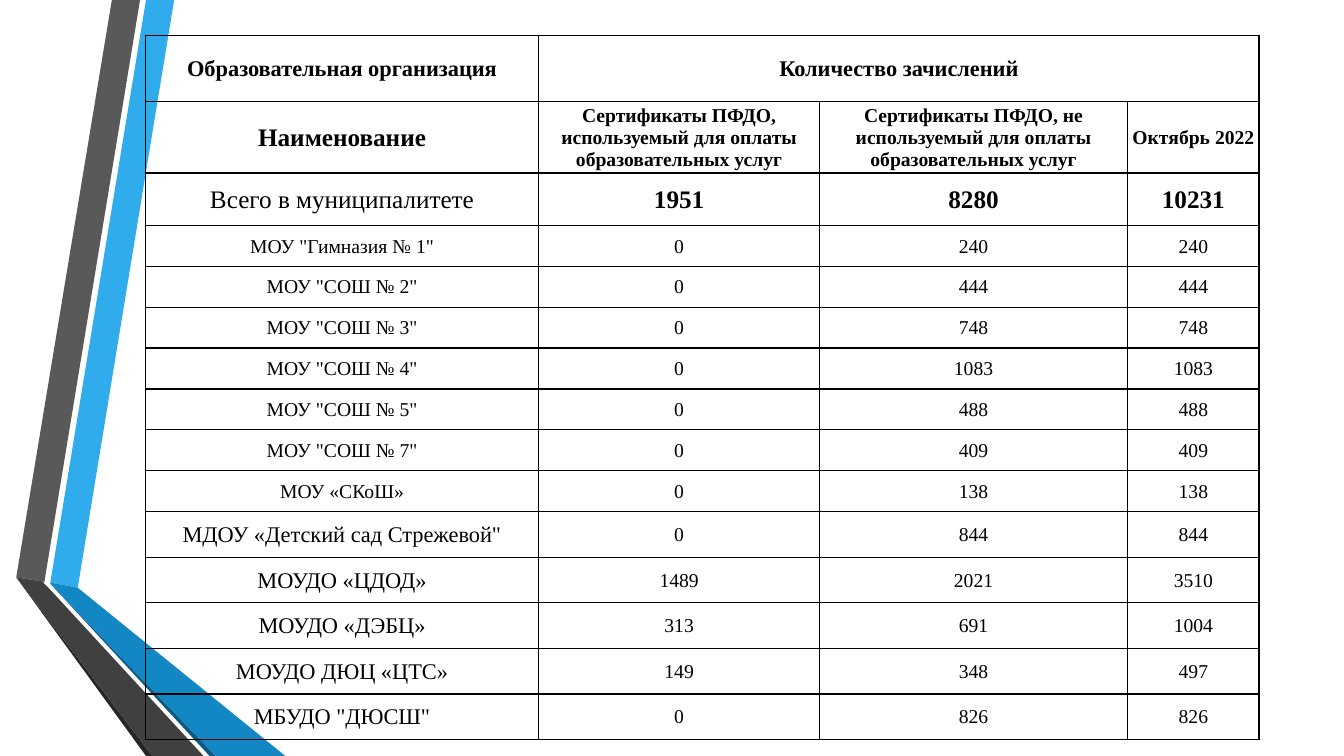
from dataclasses import dataclass

from lxml.etree import SubElement
from pptx import Presentation
from pptx.dml.color import RGBColor
from pptx.enum.text import MSO_ANCHOR as Anchor, PP_ALIGN as Align
from pptx.oxml.ns import qn
from pptx.util import Cm, Pt

FONT = "Times New Roman"
BLACK = RGBColor(0x00, 0x00, 0x00)
SKY = RGBColor(0x30, 0xAC, 0xEC)
BLUE = RGBColor(0x12, 0x87, 0xC3)
NAVY = RGBColor(0x0C, 0x5A, 0x82)
GRAY = RGBColor(0x59, 0x59, 0x59)
DARK_GRAY = RGBColor(0x40, 0x40, 0x40)
CHARCOAL = RGBColor(0x26, 0x26, 0x26)


@dataclass(frozen=True)
class Ribbon:
    color: RGBColor
    corners: tuple


@dataclass(frozen=True)
class Enrolment:
    organisation: str
    paid: int
    unpaid: int
    height: float = 1.03
    name_size: int = 14
    count_size: int = 14
    bold_counts: bool = False


RIBBONS = (
    Ribbon(SKY, ((1.27, 14.68), (1.96, 14.81), (4.39, 0), (3.68, 0))),
    Ribbon(GRAY, ((3.53, 0), (2.82, 0), (0.41, 14.55), (1.12, 14.66))),
    Ribbon(CHARCOAL, ((0.41, 14.55), (3.68, 19.05), (3.84, 19.05))),
    Ribbon(NAVY, ((1.27, 14.71), (5.28, 19.05), (5.44, 19.05))),
    Ribbon(BLUE, ((1.27, 14.71), (5.44, 19.05), (7.19, 19.05),
                  (1.96, 14.81), (1.27, 14.68))),
    Ribbon(DARK_GRAY, ((5.13, 19.05), (1.22, 14.81), (1.09, 14.68),
                       (1.12, 14.66), (0.41, 14.55), (3.84, 19.05))),
)
COLUMN_WIDTHS = (9.92, 7.07, 7.77, 3.31)
HEADER_HEIGHTS = (1.66, 1.81)
SUBHEADINGS = (
    ("Наименование", 18),
    ("Сертификаты ПФДО, используемый для оплаты образовательных услуг", 14),
    ("Сертификаты ПФДО, не используемый для оплаты образовательных услуг", 14),
    ("Октябрь 2022", 14),
)
ENROLMENTS = (
    Enrolment("Всего в муниципалитете", 1951, 8280, 1.32, 18, 18, True),
    Enrolment('МОУ "Гимназия № 1"', 0, 240),
    Enrolment('МОУ "СОШ № 2"', 0, 444),
    Enrolment('МОУ "СОШ № 3"', 0, 748),
    Enrolment('МОУ "СОШ № 4"', 0, 1083),
    Enrolment('МОУ "СОШ № 5"', 0, 488),
    Enrolment('МОУ "СОШ № 7"', 0, 409),
    Enrolment("МОУ «СКоШ»", 0, 138),
    Enrolment('МДОУ «Детский сад Стрежевой"', 0, 844, 1.15, 16),
    Enrolment("МОУДО «ЦДОД»", 1489, 2021, 1.15, 16),
    Enrolment("МОУДО «ДЭБЦ»", 313, 691, 1.15, 16),
    Enrolment("МОУДО ДЮЦ «ЦТС»", 149, 348, 1.15, 16),
    Enrolment('МБУДО "ДЮСШ"', 0, 826, 1.15, 16),
)


def draw_ribbon(slide, ribbon: Ribbon) -> None:
    start, *others = [(Cm(x), Cm(y)) for x, y in ribbon.corners]
    outline = slide.shapes.build_freeform(*start)
    outline.add_line_segments(others, close=True)
    band = outline.convert_to_shape()
    band.shadow.inherit = False
    band.fill.solid()
    band.fill.fore_color.rgb = ribbon.color
    band.line.fill.background()


def frame_cell(cell) -> None:
    cell.fill.background()
    properties = cell._tc.get_or_add_tcPr()
    for position, side in enumerate(("a:lnL", "a:lnR", "a:lnT", "a:lnB")):
        edge = SubElement(properties, qn(side), w=str(Pt(1)))
        ink = SubElement(edge, qn("a:solidFill"))
        SubElement(ink, qn("a:srgbClr"), val=str(BLACK))
        properties.insert(position, edge)


def write(cell, text: str, *, size: int = 14, bold: bool = False) -> None:
    cell.vertical_anchor = Anchor.MIDDLE
    cell.margin_left = cell.margin_right = cell.margin_top = Cm(0.03)
    cell.margin_bottom = 0
    paragraph = cell.text_frame.paragraphs[0]
    paragraph.alignment = Align.CENTER
    run = paragraph.add_run()
    run.text = text
    run.font.name = FONT
    run.font.size = Pt(size)
    run.font.bold = bold
    run.font.color.rgb = BLACK


def write_enrolment(table, row: int, enrolment: Enrolment) -> None:
    write(table.cell(row, 0), enrolment.organisation, size=enrolment.name_size)
    counts = (enrolment.paid, enrolment.unpaid, enrolment.paid + enrolment.unpaid)
    for column, count in enumerate(counts, start=1):
        write(table.cell(row, column), str(count),
              size=enrolment.count_size, bold=enrolment.bold_counts)


def draw_enrolments(slide) -> None:
    heights = HEADER_HEIGHTS + tuple(e.height for e in ENROLMENTS)
    table = slide.shapes.add_table(
        len(heights), len(COLUMN_WIDTHS), Cm(3.66), Cm(0.89),
        Cm(sum(COLUMN_WIDTHS)), Cm(sum(heights))).table
    table.first_row = table.horz_banding = False
    for column, width in zip(table.columns, COLUMN_WIDTHS):
        column.width = Cm(width)
    for row, height in zip(table.rows, heights):
        row.height = Cm(height)
    for cell in table.iter_cells():
        frame_cell(cell)

    table.cell(0, 1).merge(table.cell(0, 3))
    write(table.cell(0, 0), "Образовательная организация", size=16, bold=True)
    write(table.cell(0, 1), "Количество зачислений", size=16, bold=True)
    for column, (heading, size) in enumerate(SUBHEADINGS):
        write(table.cell(1, column), heading, size=size, bold=True)
    for row, enrolment in enumerate(ENROLMENTS, start=len(HEADER_HEIGHTS)):
        write_enrolment(table, row, enrolment)


def main() -> None:
    deck = Presentation()
    deck.slide_width, deck.slide_height = Cm(33.87), Cm(19.05)
    slide = deck.slides.add_slide(deck.slide_layouts[6])
    for ribbon in RIBBONS:
        draw_ribbon(slide, ribbon)
    draw_enrolments(slide)
    deck.save("out.pptx")


if __name__ == "__main__":
    main()
